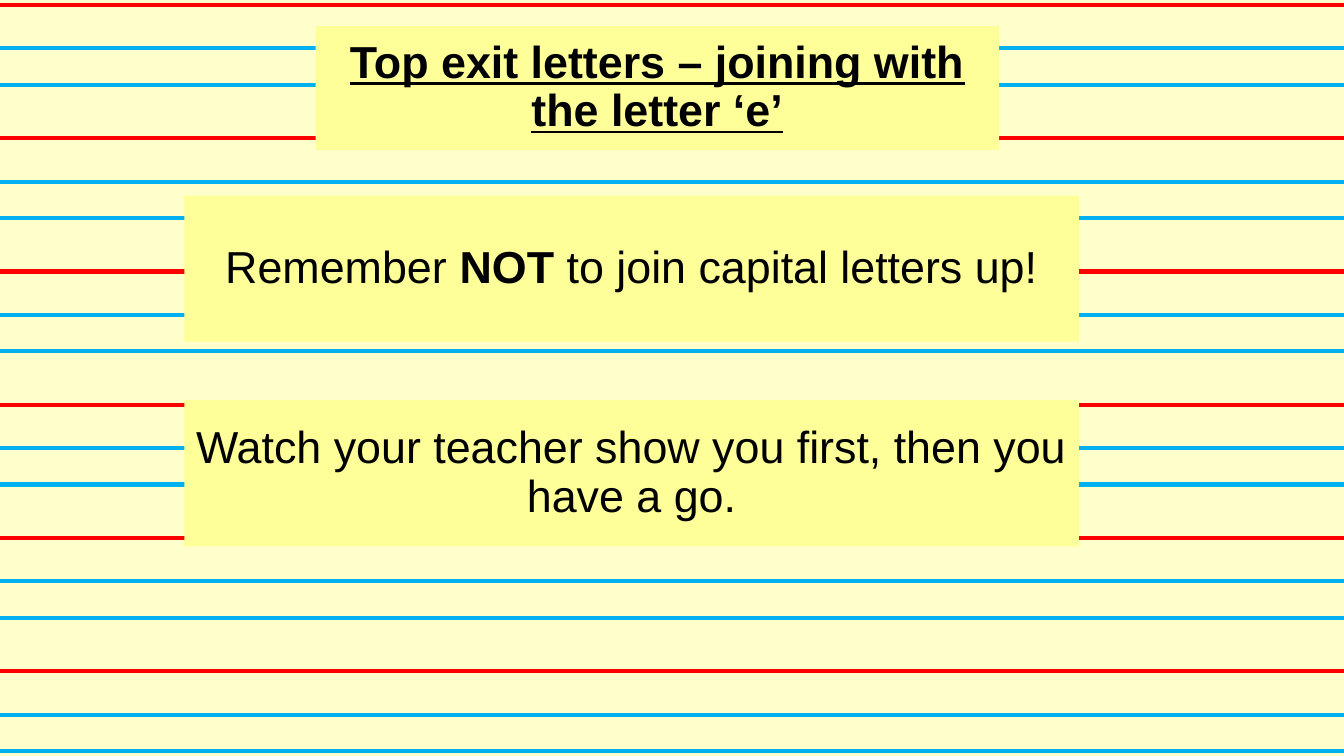
from pptx import Presentation
from pptx.dml.color import RGBColor
from pptx.enum.shapes import MSO_CONNECTOR
from pptx.enum.text import MSO_ANCHOR, MSO_AUTO_SIZE, PP_ALIGN
from pptx.oxml.ns import qn
from pptx.util import Inches, Pt
from lxml.etree import SubElement

THEME = {
    "paper": RGBColor.from_string("FFFFCC"),
    "card": RGBColor.from_string("FFFF99"),
    "red": RGBColor.from_string("FF0000"),
    "blue": RGBColor.from_string("00B0F0"),
    "rule": Pt(3),
    "font": {"name": "Arial", "size": Pt(32), "color": RGBColor(0, 0, 0)},
}
FRAME = {
    "word_wrap": True,
    "auto_size": MSO_AUTO_SIZE.NONE,
    "vertical_anchor": MSO_ANCHOR.MIDDLE,
}
PARAGRAPH = {"alignment": PP_ALIGN.CENTER, "line_spacing": 0.9}


def set_all(target, values):
    for name, value in values.items():
        setattr(target, name, value)


def fill_card(sp, box, runs):
    set_all(sp, dict(zip(("left", "top", "width", "height"), map(Inches, box))))
    sp.fill.solid()
    sp.fill.fore_color.rgb = THEME["card"]
    tf = sp.text_frame
    set_all(tf, FRAME)
    p = tf.paragraphs[0]
    set_all(p, PARAGRAPH)
    for text, style in runs:
        r = p.add_run()
        r.text = text
        r.font.color.rgb = THEME["font"]["color"]
        set_all(r.font, {"name": THEME["font"]["name"], "size": THEME["font"]["size"], **style})


prs = Presentation()
set_all(prs, {"slide_width": Inches(13.33), "slide_height": Inches(7.5)})
s = prs.slides.add_slide(prs.slide_layouts[5])
s.background.fill.solid()
s.background.fill.fore_color.rgb = THEME["paper"]

BANDS = 6
FIRST, LAST = 0.05, 6.66
PITCH = (LAST - FIRST) / (BANDS - 1)
RULES = [(0, "red"), (0.43, "blue"), (0.79, "blue")]

for band in range(BANDS):
    for offset, color in RULES:
        y = Inches(FIRST + band * PITCH + offset)
        rule = s.shapes.add_connector(MSO_CONNECTOR.STRAIGHT, 0, y, prs.slide_width, y)
        rule.line.color.rgb = THEME[color]
        rule.line.width = THEME["rule"]
        SubElement(rule.element.spPr, qn("a:effectLst"))

title = s.shapes.title
title.element.getparent().append(title.element)
fill_card(
    title,
    (3.13, 0.26, 6.78, 1.23),
    [("Top exit letters – joining with the letter ‘e’", {"bold": True, "underline": True})],
)

NOTES = [
    (1.94, [("Remember ", {}), ("NOT", {"bold": True}), (" to join capital letters up!", {})]),
    (3.97, [("Watch your teacher show you first, then you have a go.", {})]),
]
for top, runs in NOTES:
    fill_card(s.shapes.add_textbox(0, 0, 0, 0), (1.83, top, 8.87, 1.45), runs)

prs.save("out.pptx")
